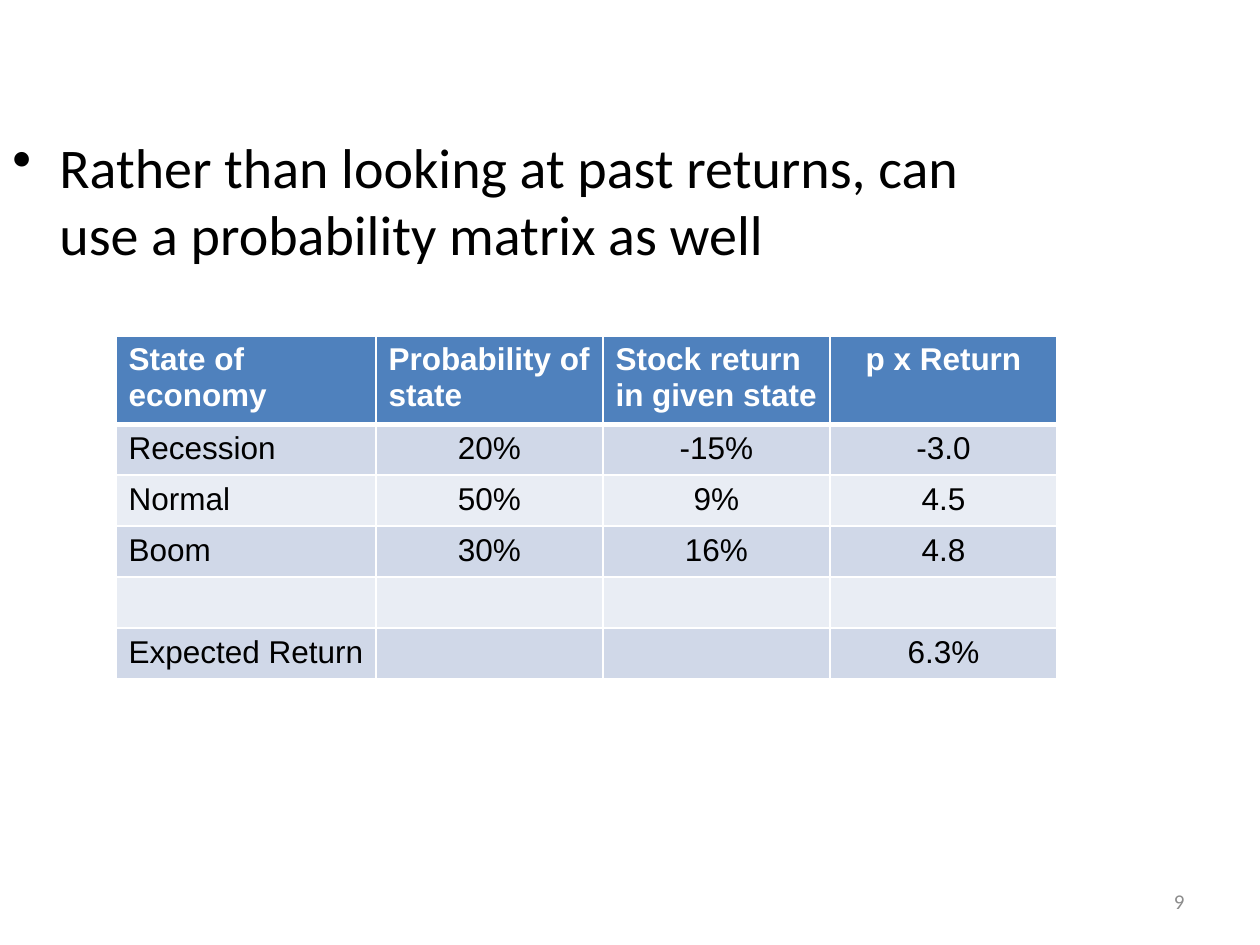
from lxml.etree import SubElement
from pptx import Presentation
from pptx.dml.color import RGBColor
from pptx.enum.text import MSO_ANCHOR, PP_ALIGN
from pptx.oxml.ns import qn
from pptx.util import Pt

POINT = "Rather than looking at past returns, can use a probability matrix as well"
NUMBER = "9"
ROWS = [
    ("State of economy", "Probability of state", "Stock return in given state", "p x Return"),
    ("Recession", "20%", "-15%", "-3.0"),
    ("Normal", "50%", "9%", "4.5"),
    ("Boom", "30%", "16%", "4.8"),
    ("", "", "", ""),
    ("Expected Return", "", "", "6.3%"),
]
WIDTHS = [260, 227, 227, 227]
ROW_H = 51

BLACK = RGBColor(0x00, 0x00, 0x00)
WHITE = RGBColor(0xFF, 0xFF, 0xFF)
GRAY = RGBColor(0x8C, 0x8C, 0x8C)
BLUE = RGBColor(0x4F, 0x81, 0xBD)
BANDS = [RGBColor(0xE9, 0xED, 0xF4), RGBColor(0xD0, 0xD8, 0xE8)]


def px(n):
    return int(n * 914400 / 126)


def style(par, name, size, color, bold=False):
    font = par.font
    font.name, font.size, font.bold = name, Pt(size), bold
    font.color.rgb = color


def add_text(slide, text, box, size, color):
    shape = slide.shapes.add_textbox(*map(px, box))
    frame = shape.text_frame
    frame.word_wrap = True
    par = frame.paragraphs[0]
    par.text = text
    style(par, "Calibri", size, color)
    return frame, par


def add_bullet(par, indent):
    props = par._p.get_or_add_pPr()
    props.set("marL", str(px(indent)))
    props.set("indent", str(-px(indent)))
    font = props.find(qn("a:defRPr"))
    mark = SubElement(props, qn("a:buChar"), char="•")
    font.addprevious(mark)


def set_borders(cell, top, bottom):
    """Draw white cell borders, with top and bottom widths in points."""
    props = cell._tc.get_or_add_tcPr()
    for side, width in (("L", 1), ("R", 1), ("T", top), ("B", bottom)):
        line = SubElement(props, qn(f"a:ln{side}"), w=str(Pt(width)))
        fill = SubElement(line, qn("a:solidFill"))
        SubElement(fill, qn("a:srgbClr"), val=str(WHITE))


def add_matrix(slide, left, top):
    frame = slide.shapes.add_table(
        len(ROWS), len(WIDTHS), px(left), px(top), px(sum(WIDTHS)), px(ROW_H * len(ROWS)))
    table = frame.table
    for col, width in zip(table.columns, WIDTHS):
        col.width = px(width)
    for r, row in enumerate(ROWS):
        table.rows[r].height = px(ROW_H)
        head = r == 0
        for c, text in enumerate(row):
            cell = table.cell(r, c)
            set_borders(cell, 3 if r == 1 else 1, 3 if head else 1)
            cell.fill.solid()
            cell.fill.fore_color.rgb = BLUE if head else BANDS[r % 2]
            par = cell.text_frame.paragraphs[0]
            par.text = text
            style(par, "Arial", 18, WHITE if head else BLACK, head)
            centred = c == 3 or (c > 0 and not head)
            par.alignment = PP_ALIGN.CENTER if centred else PP_ALIGN.LEFT


def main():
    deck = Presentation()
    deck.slide_width, deck.slide_height = px(1260), px(945)
    slide = deck.slides.add_slide(deck.slide_layouts[6])

    frame, par = add_text(slide, NUMBER, (903, 876, 294, 50), 12, GRAY)
    frame.vertical_anchor = MSO_ANCHOR.MIDDLE
    par.alignment = PP_ALIGN.RIGHT

    frame, par = add_text(slide, POINT, (0, 126, 1050, 210), 32, BLACK)
    par.space_before = Pt(6.4)
    add_bullet(par, 47)

    add_matrix(slide, 116, 336)
    deck.save("out.pptx")


if __name__ == "__main__":
    main()
